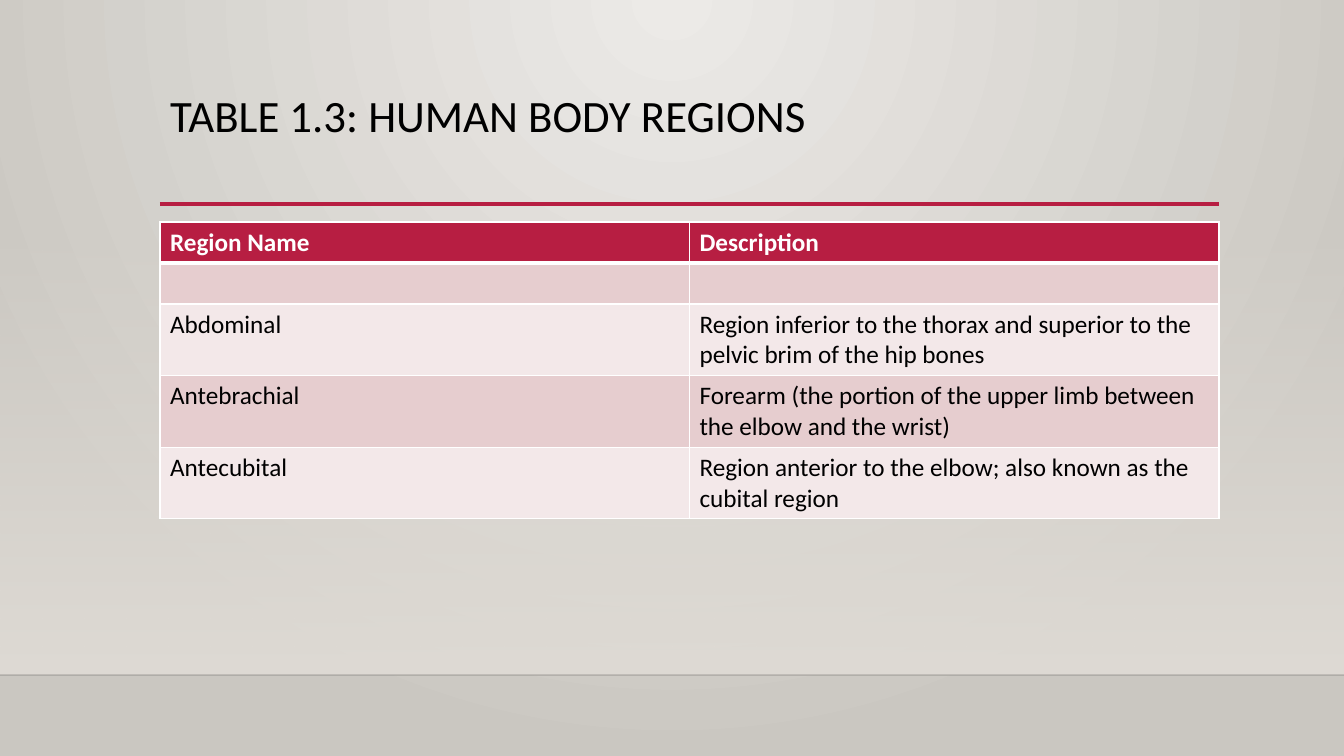
from lxml import etree
from pptx import Presentation
from pptx import util as u
from pptx.dml.color import RGBColor
from pptx.enum import shapes, text
from pptx.oxml.ns import qn

BLACK = RGBColor(0x00, 0x00, 0x00)
WHITE = RGBColor(0xFF, 0xFF, 0xFF)
CRIMSON = RGBColor(0xB7, 0x1E, 0x42)
ROSE = RGBColor(0xE6, 0xCD, 0xCF)
BLUSH = RGBColor(0xF3, 0xE8, 0xE9)
LIGHT_STONE = RGBColor(0xEC, 0xEA, 0xE7)
DARK_STONE = RGBColor(0xCA, 0xC7, 0xC1)
SAND = RGBColor(0xDF, 0xDB, 0xD5)
EDGE = RGBColor(0x00, 0x00, 0x01)

WIDTH, HEIGHT = 1344, 756
LEFT, RIGHT = 160, 1219
RULE_Y, FLOOR_Y = 204, 675
ROW_HEIGHT = 41

REGIONS = [
    ("Region Name", "Description"),
    ("", ""),
    ("Abdominal", "Region inferior to the thorax and superior to the pelvic brim of the hip bones"),
    ("Antebrachial", "Forearm (the portion of the upper limb between the elbow and the wrist)"),
    ("Antecubital", "Region anterior to the elbow; also known as the cubital region"),
]


def px(length):
    return u.Emu(round(length * 914400 / 100.8))


def set_alpha(color_element, percent):
    etree.SubElement(color_element, qn("a:alpha"), val=str(percent * 1000))


class RegionSlide:
    font_name = "Calibri"

    def __init__(self, presentation):
        self.slide = presentation.slides.add_slide(presentation.slide_layouts[5])

    def add_run(self, paragraph, words, size, color, bold=False):
        run = paragraph.add_run()
        run.text = words
        run.font.name = self.font_name
        run.font.size = u.Pt(size)
        run.font.color.rgb = color
        run.font.bold = bold

    def set_gradient(self, fill, colors):
        fill.gradient()
        for stop, color in zip(fill.gradient_stops, colors):
            stop.color.rgb = color

    def background(self, inner, outer):
        self.set_gradient(self.slide.background.fill, (inner, outer))
        gradient = self.slide.element.find(".//" + qn("a:gradFill"))
        gradient.remove(gradient.find(qn("a:lin")))
        circle = etree.SubElement(gradient, qn("a:path"), path="circle")
        etree.SubElement(circle, qn("a:fillToRect"), l="43000", t="0", r="43000", b="100000")

    def fading_panel(self, top, bottom, color):
        panel = self.slide.shapes.add_shape(
            shapes.MSO_SHAPE.RECTANGLE, 0, px(top), px(WIDTH), px(bottom - top))
        panel.shadow.inherit = False
        panel.line.fill.background()
        self.set_gradient(panel.fill, (color, color))
        panel.fill.gradient_angle = 270
        set_alpha(panel.element.find(".//" + qn("a:srgbClr")), 0)

    def rule(self, left, right, y, color, weight, opacity=100):
        line = self.slide.shapes.add_connector(
            shapes.MSO_CONNECTOR.STRAIGHT, px(left), px(y), px(right), px(y))
        line.line.color.rgb = color
        line.line.width = u.Pt(weight)
        if opacity < 100:
            set_alpha(line.element.find(".//" + qn("a:srgbClr")), opacity)
        etree.SubElement(line.element.spPr, qn("a:effectLst"))

    def title(self, words, left, top, width, height):
        title = self.slide.shapes.title
        title.left, title.top = px(left), px(top)
        title.width, title.height = px(width), px(height)
        title.element.getparent().append(title.element)
        title.text_frame.vertical_anchor = text.MSO_ANCHOR.TOP
        paragraph = title.text_frame.paragraphs[0]
        paragraph.alignment = text.PP_ALIGN.LEFT
        paragraph.line_spacing = 0.9
        self.add_run(paragraph, words, 32, BLACK)

    def set_borders(self, cell, top, bottom):
        properties = cell._tc.get_or_add_tcPr()
        for side, weight in (("L", 1), ("R", 1), ("T", top), ("B", bottom)):
            border = etree.SubElement(properties, qn("a:ln" + side), w=str(u.Pt(weight)))
            solid = etree.SubElement(border, qn("a:solidFill"))
            etree.SubElement(solid, qn("a:srgbClr"), val=str(WHITE))

    def table(self, rows, left, top, width):
        frame = self.slide.shapes.add_table(
            len(rows), len(rows[0]), px(left), px(top), px(width), px(ROW_HEIGHT * len(rows)))
        for row_index, row in enumerate(rows):
            header = row_index == 0
            band = CRIMSON if header else (BLUSH, ROSE)[row_index % 2]
            for column_index, words in enumerate(row):
                cell = frame.table.cell(row_index, column_index)
                self.set_borders(cell, 3 if row_index == 1 else 1, 3 if header else 1)
                cell.fill.solid()
                cell.fill.fore_color.rgb = band
                if words:
                    self.add_run(cell.text_frame.paragraphs[0], words, 18,
                                 WHITE if header else BLACK, header)


def main():
    presentation = Presentation()
    presentation.slide_width, presentation.slide_height = px(WIDTH), px(HEIGHT)
    page = RegionSlide(presentation)
    page.background(LIGHT_STONE, DARK_STONE)
    page.fading_panel(223, FLOOR_Y, SAND)
    page.rule(0, WIDTH, FLOOR_Y, EDGE, 1, 20)
    page.rule(LEFT, RIGHT, RULE_Y, CRIMSON, 2.5)
    page.title("TABLE 1.3: HUMAN BODY REGIONS", LEFT, 89, RIGHT - LEFT, 115)
    page.table(REGIONS, LEFT, 222, RIGHT - LEFT)
    presentation.save("out.pptx")


if __name__ == "__main__":
    main()
